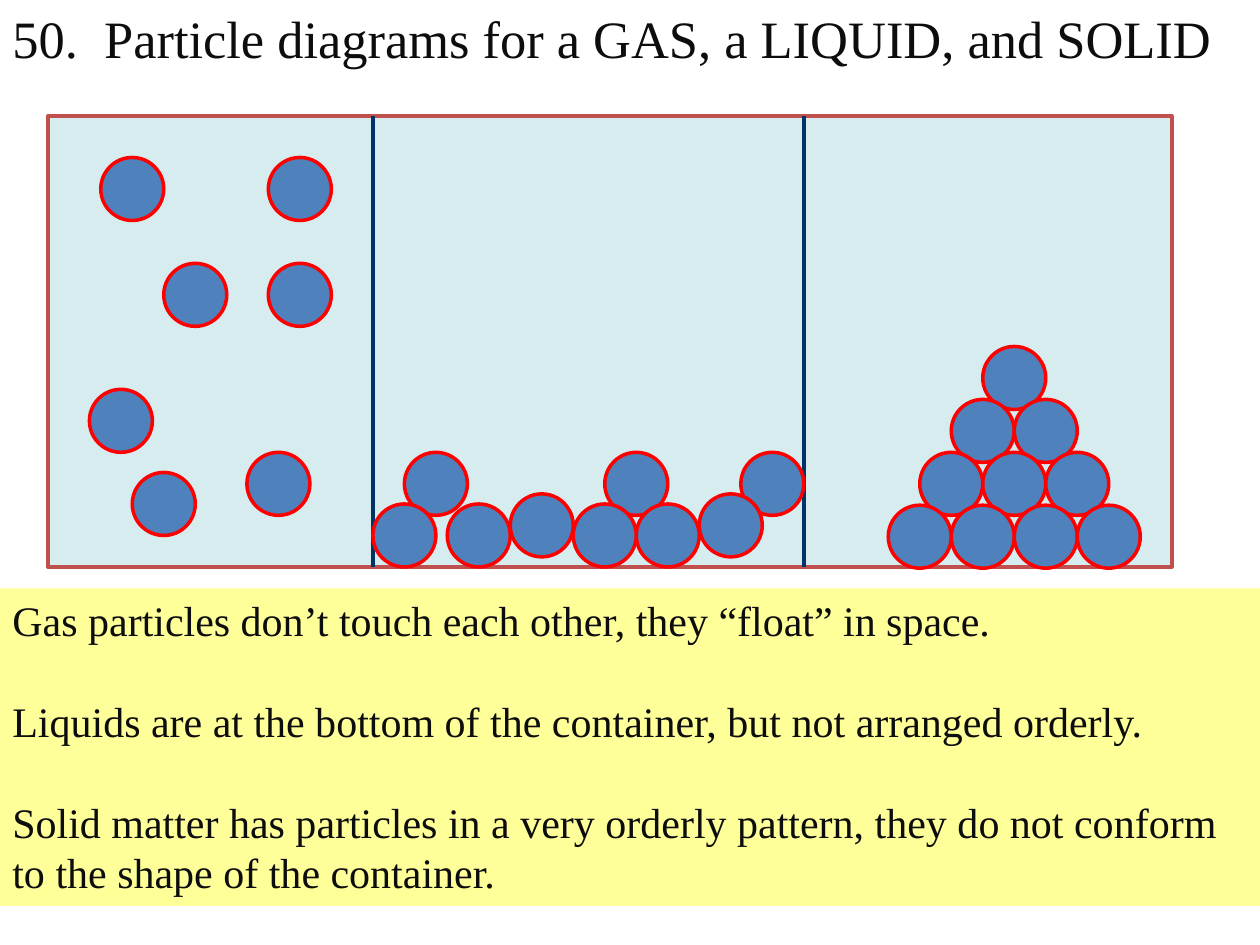
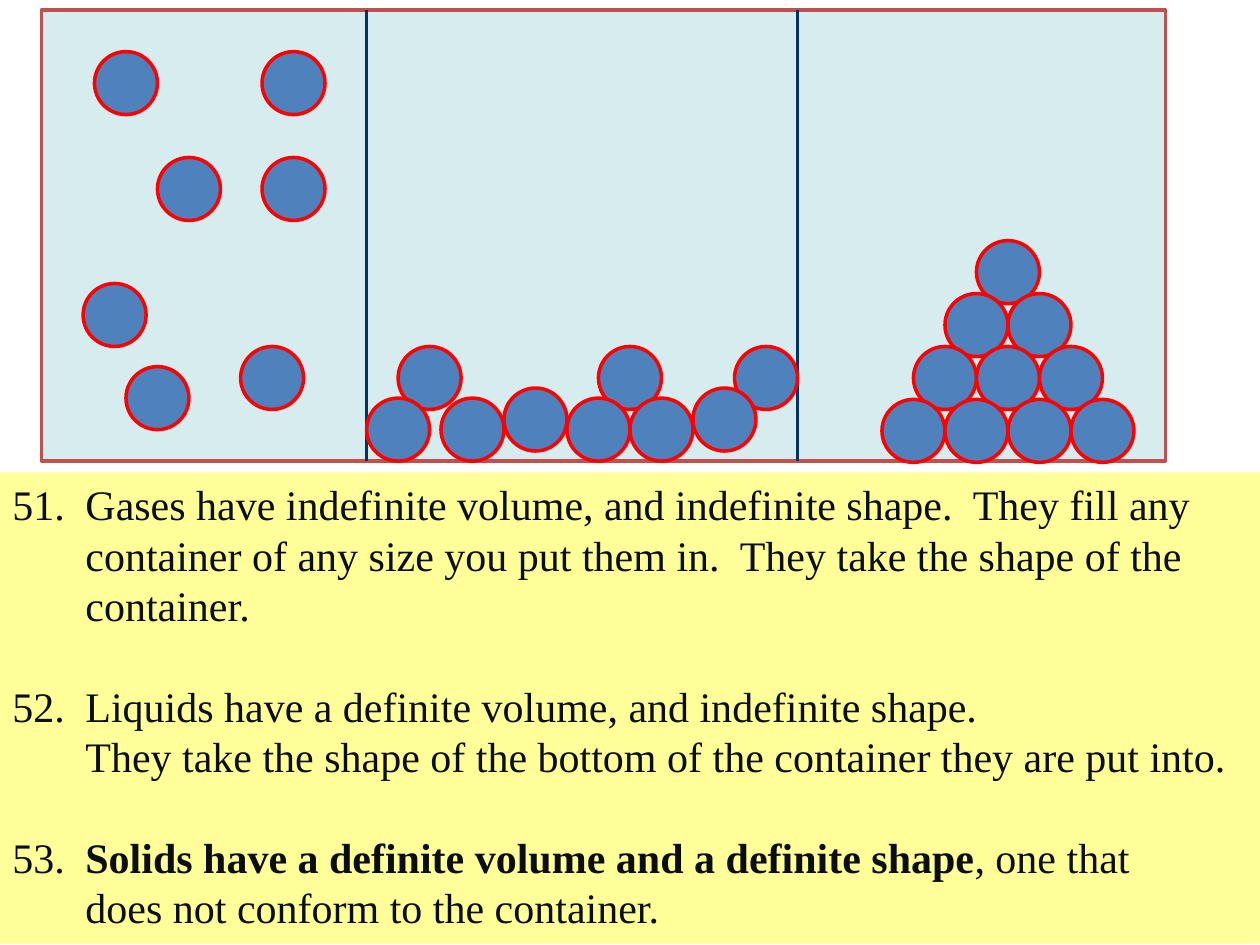
from lxml.etree import SubElement
from pptx import Presentation
from pptx.dml.color import RGBColor
from pptx.enum.shapes import MSO_CONNECTOR, MSO_SHAPE
from pptx.enum.text import MSO_ANCHOR, PP_ALIGN
from pptx.oxml.ns import qn
from pptx.util import Inches, Pt

INK = RGBColor(0x0D, 0x0D, 0x0D)
YELLOW = RGBColor(0xFF, 0xFF, 0x99)
PALE = RGBColor(0xD6, 0xEC, 0xEE)
BRICK = RGBColor(0xC0, 0x50, 0x4D)
NAVY = RGBColor(0x00, 0x33, 0x66)
BLUE = RGBColor(0x4F, 0x81, 0xBD)
RED = RGBColor(0xFF, 0x00, 0x00)

FONT = "Times New Roman"
LEADING = 1.2
BODY = 24
HANG = 0.58

# Lengths inside the box are measured from its top left corner.
BOX_W, BOX_H = 8.92, 3.58
WALLS = (2.58, 6.0)
SIZE = 0.5
ROW_GAP = 0.42
GAS = [(0.33, 2.17), (1.58, 2.67), (1.75, 1.17), (0.92, 1.17),
       (1.75, 0.33), (0.42, 0.33), (0.67, 2.83)]
LIQUID = [(4.42, 2.67), (4.67, 3.08), (4.17, 3.08), (3.67, 3.0), (2.83, 2.67),
          (3.17, 3.08), (2.58, 3.08), (5.5, 2.67), (5.17, 3.0)]
SOLID = [(7.42 + (col - row / 2) * SIZE, 1.83 + row * ROW_GAP)
         for row in range(4) for col in range(row + 1)]

STATES = [
    [("Gas particles don’t touch each other, they “float” in space.", False)],
    [("Liquids are at the bottom of the container, but not arranged orderly.", False)],
    [("Solid matter has particles in a very orderly pattern, "
      "they do not conform to the shape of the container.", False)],
]
RULES = [
    [("51.\tGases have indefinite volume, and indefinite shape.  They fill any\n"
      "container of any size you put them in.  They take the shape of the\n"
      "container.", False)],
    [("52.\tLiquids have a definite volume, and indefinite shape.\n"
      "They take the shape of the bottom of the container they are put into.", False)],
    [("53.\t", False),
     ("Solids have a definite volume and a definite shape", True),
     (", one that\ndoes not conform to the container.", False)],
]


def add_form(slide, kind, x, y, w, h, fill, line=None):
    form = slide.shapes.add_shape(kind, Inches(x), Inches(y), Inches(w), Inches(h))
    form.shadow.inherit = False
    form.fill.solid()
    form.fill.fore_color.rgb = fill
    if line is None:
        form.line.fill.background()
    else:
        form.line.color.rgb = line
        form.line.width = Pt(2)
    return form


def add_wall(slide, x, top):
    wall = slide.shapes.add_connector(
        MSO_CONNECTOR.STRAIGHT, Inches(x), Inches(top), Inches(x), Inches(top + BOX_H))
    wall.line.color.rgb = NAVY
    wall.line.width = Pt(2)
    SubElement(wall._element.spPr, qn("a:effectLst"))


def add_run(para, text, size, bold):
    """Add text in one style, with a line break at each newline."""
    for i, part in enumerate(text.split("\n")):
        if i:
            para.add_line_break()
        run = para.add_run()
        run.text = part
        font = run.font
        font.name, font.size, font.bold = FONT, Pt(size), bold
        font.color.rgb = INK


def fill_text(shape, paras, size, hang=0):
    frame = shape.text_frame
    frame.word_wrap = True
    frame.vertical_anchor = MSO_ANCHOR.TOP
    for i, runs in enumerate(paras):
        para = frame.add_paragraph() if i else frame.paragraphs[0]
        para.alignment = PP_ALIGN.LEFT
        para.line_spacing = Pt(size * LEADING)
        if i:
            para.space_before = Pt(size * LEADING)
        if hang:
            props = para._p.get_or_add_pPr()
            props.set("marL", str(Inches(hang)))
            props.set("indent", str(-Inches(hang)))
        for text, bold in runs:
            add_run(para, text, size, bold)


def add_title(slide, text):
    box = slide.shapes.add_textbox(0, 0, Inches(10), Inches(0.61))
    fill_text(box, [[(text, False)]], 30)


def add_model(slide, left, top):
    """Draw the box with gas, liquid and solid side by side."""
    add_form(slide, MSO_SHAPE.RECTANGLE, left, top, BOX_W, BOX_H, PALE, BRICK)
    for x in WALLS:
        add_wall(slide, left + x, top)
    for x, y in GAS + LIQUID + SOLID:
        add_form(slide, MSO_SHAPE.OVAL, left + x, top + y, SIZE, SIZE, BLUE, RED)


def add_notes(slide, top, height, paras, hang=0):
    """Draw the yellow band with its text."""
    band = add_form(slide, MSO_SHAPE.RECTANGLE, 0, top, 10, height, YELLOW)
    fill_text(band, paras, BODY, hang)


def main():
    deck = Presentation()
    deck.slide_width, deck.slide_height = Inches(10), Inches(7.5)
    blank = deck.slide_layouts[6]

    slide = deck.slides.add_slide(blank)
    add_title(slide, "50.  Particle diagrams for a GAS, a LIQUID, and SOLID")
    add_model(slide, 0.38, 0.92)
    add_notes(slide, 4.67, 2.52, STATES)

    slide = deck.slides.add_slide(blank)
    add_model(slide, 0.33, 0.08)
    add_notes(slide, 3.75, 3.74, RULES, HANG)

    deck.save("out.pptx")


if __name__ == "__main__":
    main()
